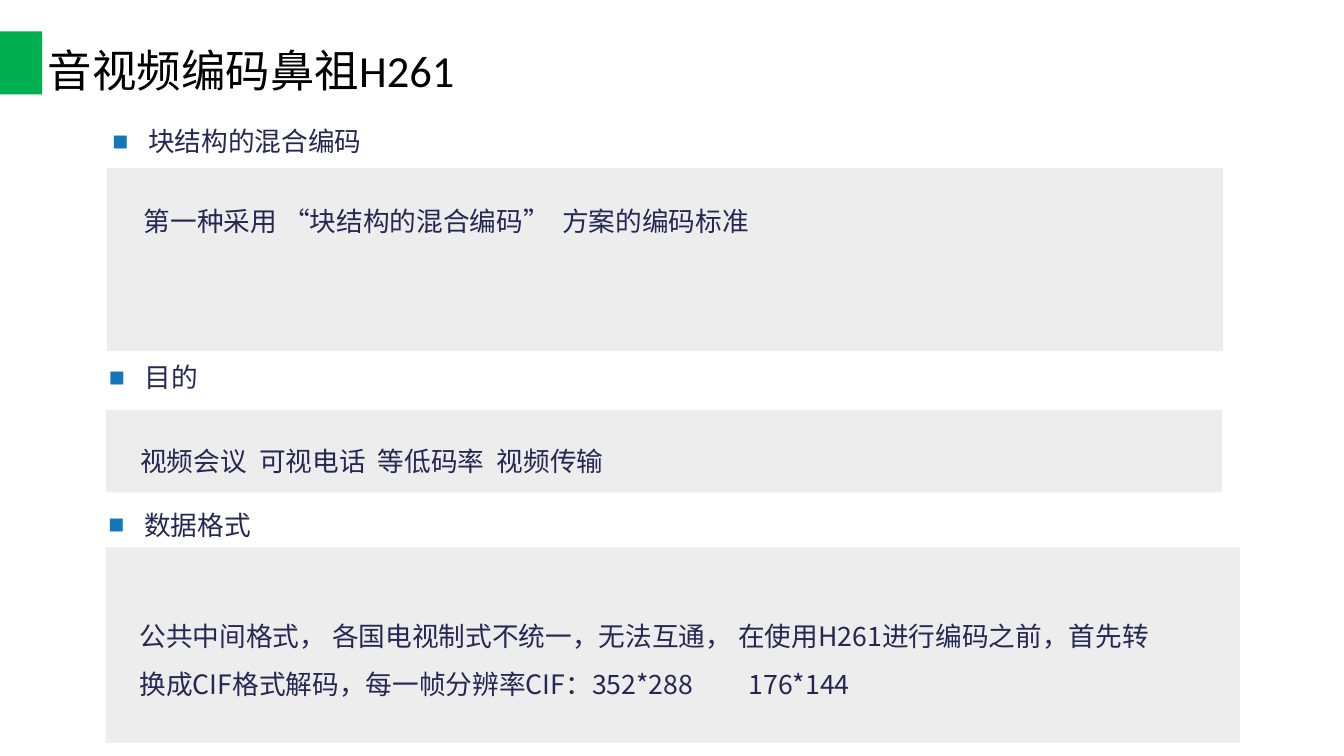
from pptx import Presentation
from pptx import util as u
from pptx.dml.color import RGBColor
from pptx.enum import shapes, text
from pptx.oxml.ns import qn
from lxml import etree

GREEN = RGBColor(0x00, 0xB0, 0x50)
PANEL_GRAY = RGBColor(0xED, 0xED, 0xED)
NAVY = RGBColor(0x24, 0x28, 0x52)
BULLET_BLUE = RGBColor(0x15, 0x77, 0xBA)
BLACK = RGBColor(0, 0, 0)
TITLE_FONT = "Calibri"
BODY_FONT = "Noto Sans CJK SC"
BULLET_INDENT = 48.24
TEXT_INDENT = 42.3
TEXT_WIDTH = 1395

# Panel box, heading rise above it, text drop inside it, inset, tab stops
SECTIONS = [
    dict(box=(144.7, 226.8, 1506.2, 247), heading="块结构的混合编码",
         body="第一种采用 “块结构的混合编码”\t方案的编码标准",
         rise=83.5, drop=24.5, inset=7.2, tabs=[565]),
    dict(box=(143.3, 553, 1506.2, 111.6), heading="目的",
         body="视频会议\t可视电话\t等低码率\t视频传输",
         rise=90.7, drop=21.6, inset=3.6, tabs=[160.5, 321, 481.5]),
    dict(box=(142.6, 738.7, 1531.4, 263.5), heading="数据格式",
         body="公共中间格式， 各国电视制式不统一，无法互通， 在使用H261进行编码之前，"
              "首先转换成CIF格式解码，每一帧分辨率CIF：352*288\t176*144",
         rise=77.8, drop=72, inset=3.6, tabs=[822]),
]


def add_rectangle(slide, box, color):
    shape = slide.shapes.add_shape(shapes.MSO_SHAPE.RECTANGLE, *map(u.Pt, box))
    shape.shadow.inherit = False
    shape.fill.solid()
    shape.fill.fore_color.rgb = color
    shape.line.fill.background()


def write_text(shape, content, size=36, font=BODY_FONT, color=NAVY,
               spacing=1.5, inset=7.2, bullet=False, tabs=()):
    frame = shape.text_frame
    frame.word_wrap = True
    frame.margin_left = frame.margin_right = u.Pt(inset)
    frame.margin_top = frame.margin_bottom = u.Pt(3.6)
    paragraph = frame.paragraphs[0]
    paragraph.alignment = text.PP_ALIGN.LEFT
    paragraph.line_spacing = spacing
    properties = paragraph._p.get_or_add_pPr()
    if bullet:
        properties.set("marL", str(u.Pt(BULLET_INDENT)))
        properties.set("indent", str(-u.Pt(BULLET_INDENT)))
        bullet_color = etree.SubElement(properties, qn("a:buClr"))
        etree.SubElement(bullet_color, qn("a:srgbClr"), val=str(BULLET_BLUE))
        etree.SubElement(properties, qn("a:buFont"), typeface="Arial")
        etree.SubElement(properties, qn("a:buChar"), char="■")
    if tabs:
        tab_list = etree.SubElement(properties, qn("a:tabLst"))
        for position in tabs:
            etree.SubElement(tab_list, qn("a:tab"), pos=str(u.Pt(position)), algn="l")
    run = paragraph.add_run()
    run.text = content
    run.font.size = u.Pt(size)
    run.font.name = font
    run.font.color.rgb = color
    east_asian = etree.Element(qn("a:ea"), typeface=BODY_FONT)
    run._r.rPr.find(qn("a:latin")).addnext(east_asian)


def add_text(slide, box, content, **text_format):
    shape = slide.shapes.add_textbox(*map(u.Pt, box))
    write_text(shape, content, **text_format)
    shape.text_frame.auto_size = text.MSO_AUTO_SIZE.SHAPE_TO_FIT_TEXT


def add_header(slide, box, content):
    left, top, width, height = box
    # Green marker at the slide edge
    add_rectangle(slide, (left, top + 42.5, 56.9, 85), GREEN)
    # Title
    title = slide.shapes.title
    title.left, title.top = u.Pt(left + 57.6), u.Pt(top)
    title.width, title.height = u.Pt(width - 57.6), u.Pt(height)
    write_text(title, content, size=60, font=TITLE_FONT, color=BLACK, spacing=0.9)
    title.text_frame.vertical_anchor = text.MSO_ANCHOR.MIDDLE
    title.text_frame.auto_size = text.MSO_AUTO_SIZE.NONE


def add_section(slide, box, heading, body, rise, drop, inset, tabs):
    left, top, width, height = box
    # Gray panel
    add_rectangle(slide, box, PANEL_GRAY)
    # Bulleted heading above the panel
    add_text(slide, (left, top - rise, TEXT_WIDTH, 70), heading,
             inset=inset, bullet=True)
    # Explanation inside the panel
    add_text(slide, (left + TEXT_INDENT, top + drop, TEXT_WIDTH, 72), body,
             inset=inset, tabs=tabs)


def main():
    presentation = Presentation()
    presentation.slide_width = u.Pt(1814.4)
    presentation.slide_height = u.Pt(1020.24)
    slide = presentation.slides.add_slide(presentation.slide_layouts[5])
    add_header(slide, (0, 0, 1622.2, 197.3), "音视频编码鼻祖H261")
    for section in SECTIONS:
        add_section(slide, **section)
    presentation.save("out.pptx")


if __name__ == "__main__":
    main()
